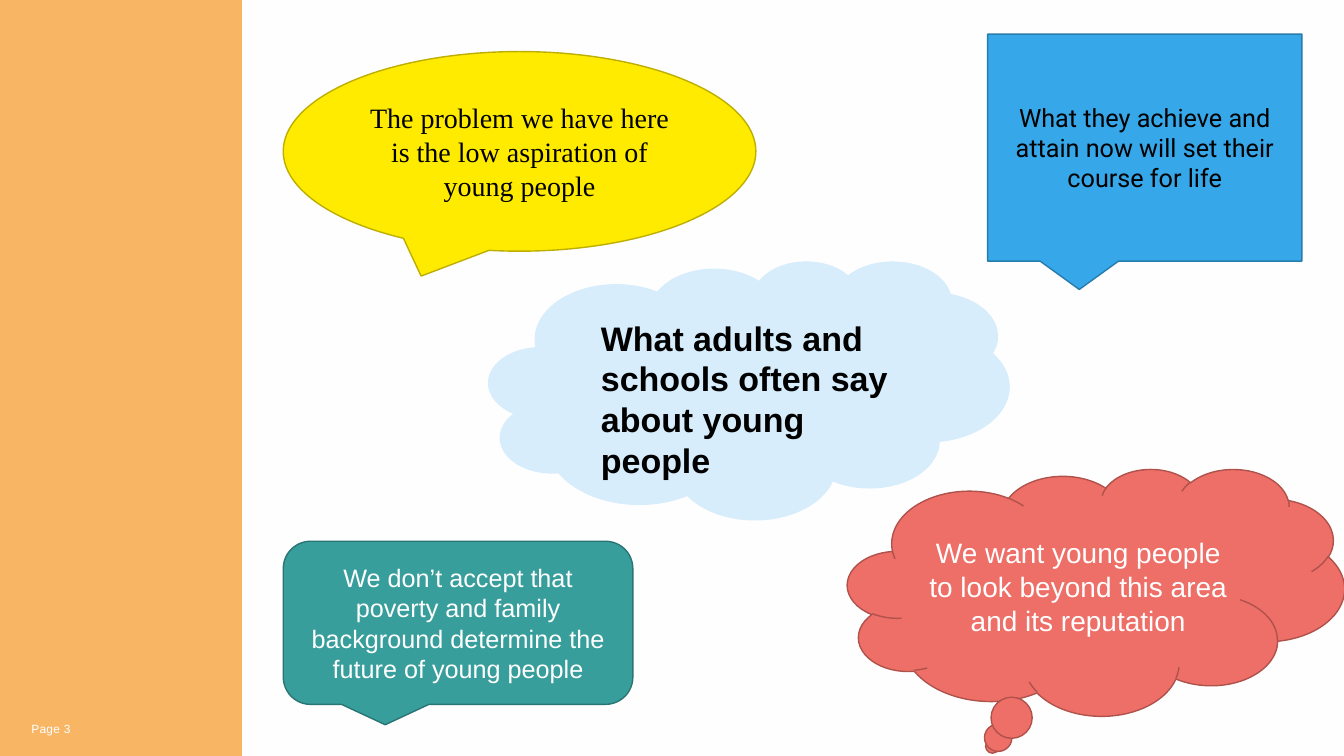
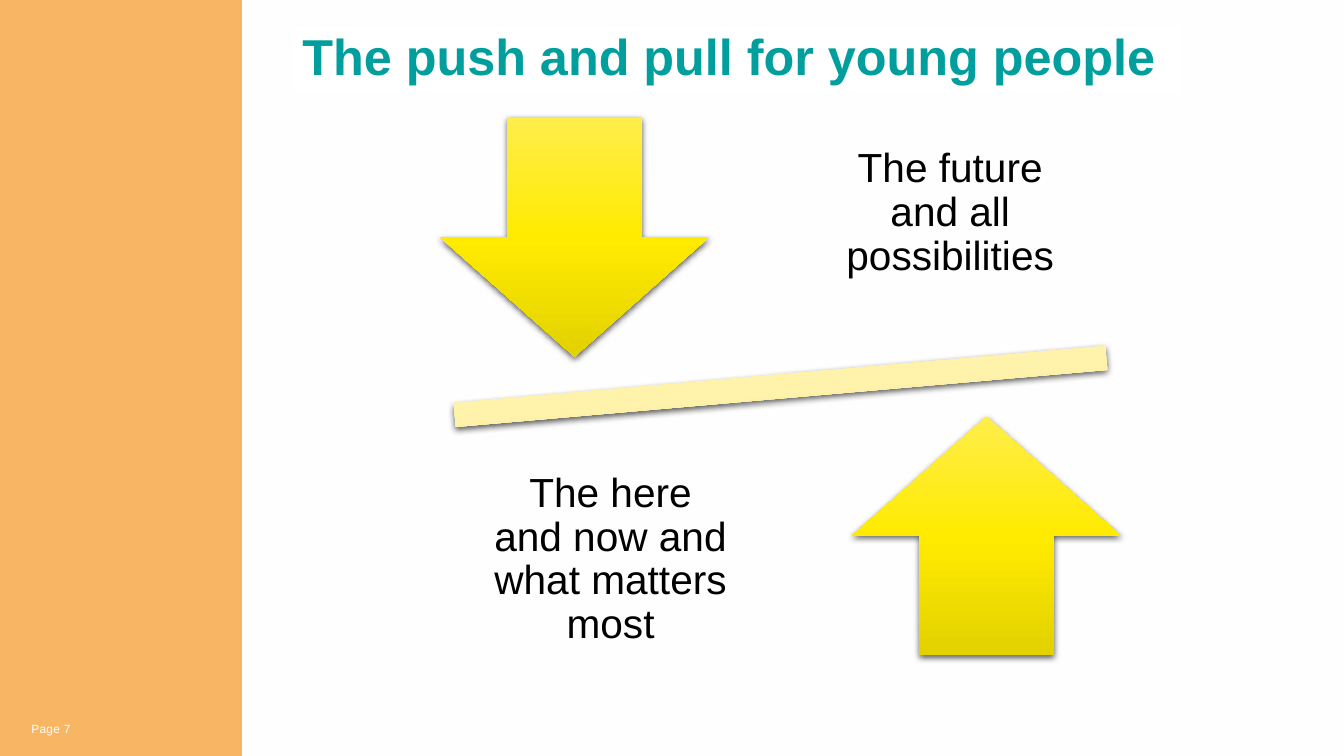
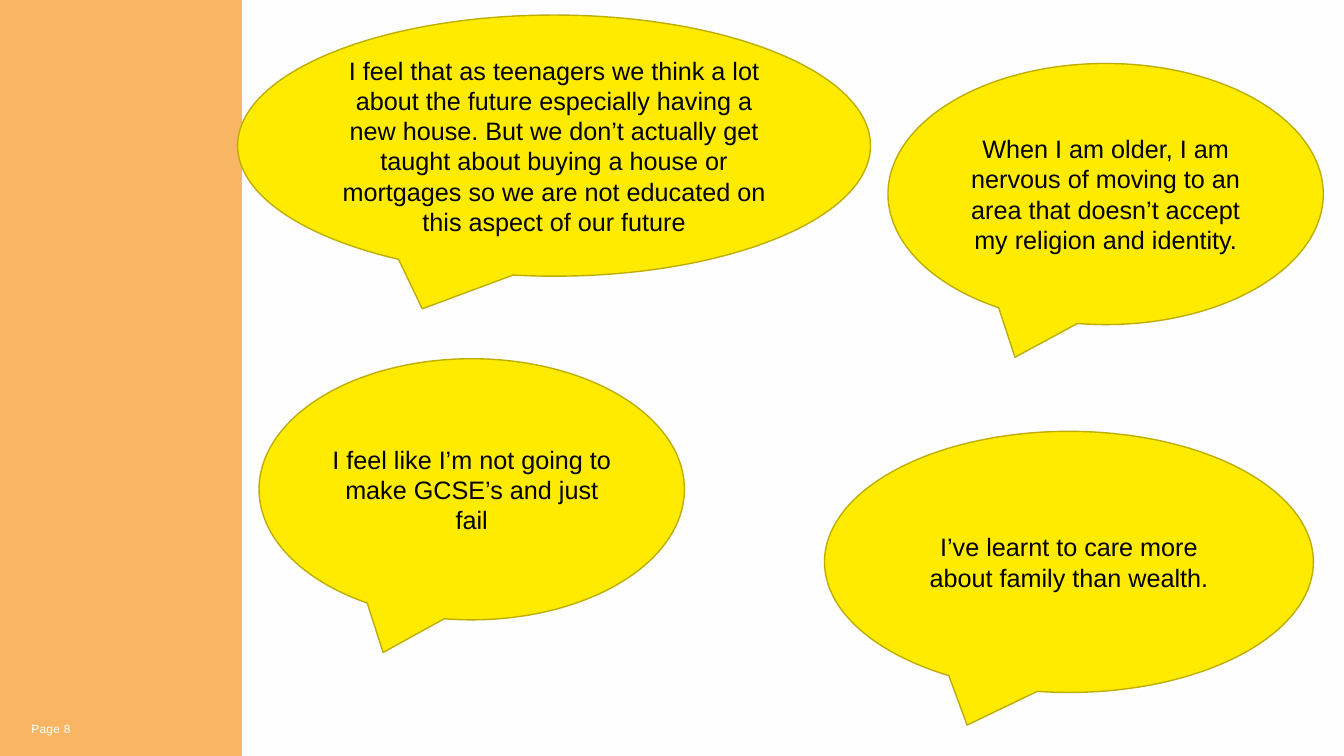
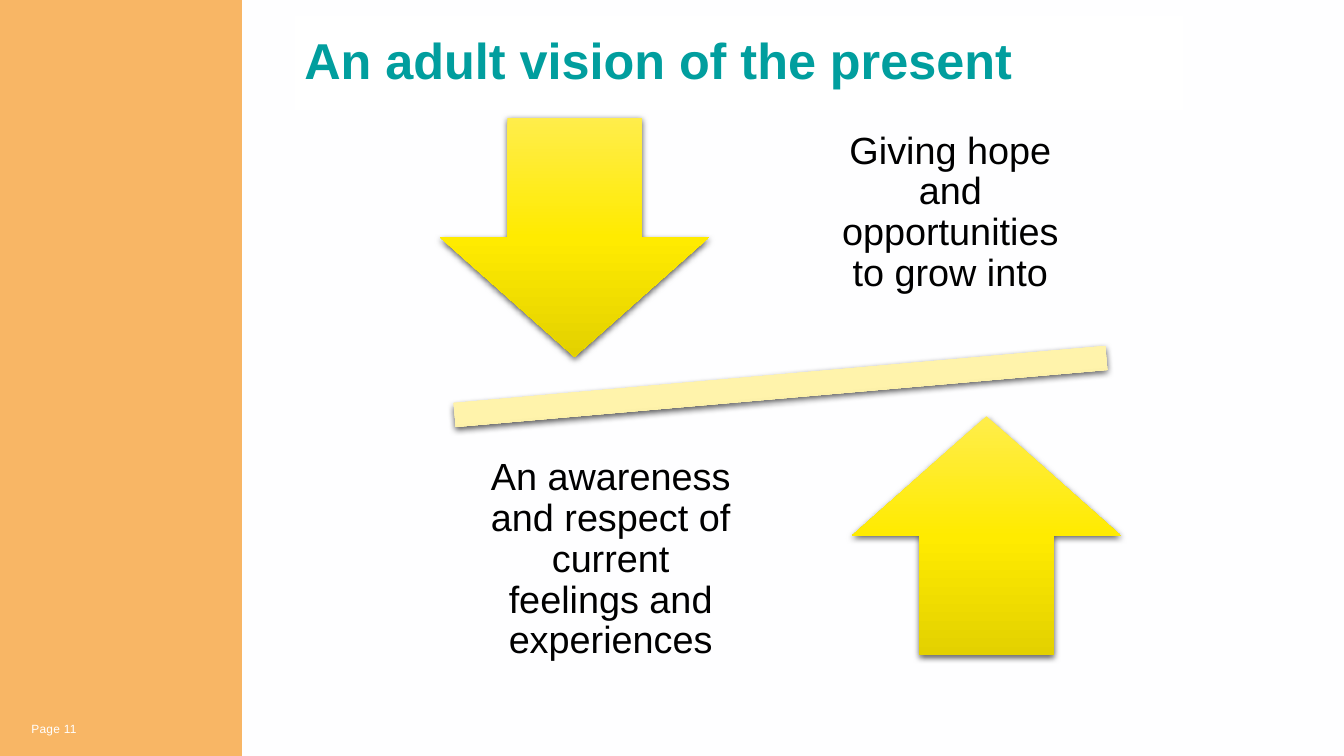
from dataclasses import dataclass

from pptx import Presentation
from pptx.dml.color import RGBColor
from pptx.enum.shapes import MSO_SHAPE as Geo
from pptx.enum.text import MSO_ANCHOR as Anchor, PP_ALIGN as Align
from pptx.oxml import parse_xml as to_xml
from pptx.oxml.ns import nsdecls, qn
from pptx.util import Cm, Pt


@dataclass(frozen=True)
class Theme:
    back: str = "FEFEFF"
    side: str = "F8B665"
    white: str = "FFFFFF"
    black: str = "000000"
    title: str = "019E9E"
    cloud: str = "D7EDFB"
    yellow: tuple = ("FFEB00", "BDAE00")
    red: tuple = ("ED6F67", "AF524C")
    teal: tuple = ("389E9C", "297573")
    blue: tuple = ("36A7E9", "287CAC")
    arrow: tuple = ("FFED4B", "FFEB00", "E3D100")
    bar: tuple = ("FFF5B9", "FFF3AB", "E5DA96")
    sans: str = "Arial"
    serif: str = "Times New Roman"
    modern: str = "Roboto"
    head: float = 36
    hub: float = 24.3
    large: float = 20
    body: float = 18
    foot: float = 8.5


T = Theme()
WIDE, HIGH = 33.87, 19.05


def rgb(code):
    return RGBColor.from_string(code)


def lengths(box):
    return [Cm(n) for n in box]


def middle(x, y, wide, high):
    return x - wide / 2, y - high / 2, wide, high


def write(shape, text, size, color=T.black, font=T.sans, bold=False,
          align=Align.CENTER, anchor=Anchor.MIDDLE, pad=None, space=None):
    frame = shape.text_frame
    frame.word_wrap = True
    frame.vertical_anchor = anchor
    if pad:
        (frame.margin_left, frame.margin_top,
         frame.margin_right, frame.margin_bottom) = lengths(pad)
    para = frame.paragraphs[0]
    para.text = text
    para.alignment = align
    para.line_spacing = space
    para.font.size = Pt(size)
    para.font.name = font
    para.font.bold = bold
    para.font.color.rgb = rgb(color)
    return para


def solid(slide, geo, box, fill, line=None, weight=1):
    shape = slide.shapes.add_shape(geo, *lengths(box))
    shape.shadow.inherit = False
    shape.fill.solid()
    shape.fill.fore_color.rgb = rgb(fill)
    if line:
        shape.line.color.rgb = rgb(line)
        shape.line.width = Pt(weight)
    else:
        shape.line.fill.background()
    return shape


def glossy(slide, geo, box, tones):
    shape = slide.shapes.add_shape(geo, *lengths(box))
    stops = "".join(
        f'<a:gs pos="{i * 50000}"><a:srgbClr val="{tone}"/></a:gs>'
        for i, tone in enumerate(tones))
    props = shape._element.spPr
    props.append(to_xml(
        f'<a:gradFill {nsdecls("a")} rotWithShape="1"><a:gsLst>{stops}</a:gsLst>'
        '<a:lin ang="5400000" scaled="0"/></a:gradFill>'))
    shape.line.fill.background()
    shape.shadow.inherit = False
    props.find(qn("a:effectLst")).append(to_xml(
        f'<a:outerShdw {nsdecls("a")} blurRad="{Pt(4.5)}" dist="{Pt(1.5)}" '
        'dir="5400000" rotWithShape="0"><a:srgbClr val="000000">'
        '<a:alpha val="63000"/></a:srgbClr></a:outerShdw>'))
    return shape


def label(slide, box, text, size, **style):
    return write(slide.shapes.add_textbox(*lengths(box)), text, size, **style)


def start(deck, page):
    slide = deck.slides.add_slide(deck.slide_layouts[6])
    solid(slide, Geo.RECTANGLE, (0, 0, 6.1, HIGH), T.side)
    para = label(slide, (0.79, 18.19, 1.75, 0.86), f"Page {page}", T.foot,
                 color=T.white, align=Align.LEFT, anchor=Anchor.TOP,
                 pad=(0, 0, 0, 0))
    para.runs[0]._r.get_or_add_rPr().set("spc", "20")
    return slide


def title(slide, box, text):
    shape = solid(slide, Geo.RECTANGLE, box, T.white)
    write(shape, text, T.head, color=T.title, bold=True,
          align=Align.LEFT, space=0.9)


def bubble(slide, box, text, geo=Geo.OVAL_CALLOUT, tones=T.yellow,
           size=T.body, **style):
    write(solid(slide, geo, box, *tones), text, size, **style)


def hub(slide, box, text):
    shape = solid(slide, Geo.CLOUD, box, T.cloud, T.cloud, 0.75)
    write(shape, text, T.hub, bold=True, align=Align.LEFT,
          anchor=Anchor.TOP, pad=(1.02, 0.43, 0.25, 0.13))


def balance(slide, center, future, present, size):
    x, y = center
    bar = glossy(slide, Geo.MATH_MINUS, middle(x, y, 22.43, 2.57), T.bar)
    bar.rotation = -5
    pad = (size * 0.02,) * 4
    for sign, geo, text in ((-1, Geo.DOWN_ARROW, future),
                            (1, Geo.UP_ARROW, present)):
        glossy(slide, geo,
               middle(x + sign * 5.19, y + sign * 3.76, 6.78, 6.02), T.arrow)
        label(slide, middle(x - sign * 4.28, y + sign * 4.37, 7.21, 6.32),
              text, size, pad=pad, space=0.9)


def adults(deck):
    slide = start(deck, 3)
    hub(slide, (12.32, 6.58, 13.11, 6.5),
        "What adults and schools often say about young people")
    bubble(slide, (7.14, 1.3, 11.91, 5.03),
           "The problem we have here is the low aspiration of young people",
           size=T.large, font=T.serif)
    bubble(slide, (21.36, 11.81, 12.52, 6.22),
           "We want young people to look beyond this area and its reputation",
           Geo.CLOUD_CALLOUT, T.red, T.large, color=T.white)
    bubble(slide, (7.14, 13.64, 8.81, 4.11),
           "We don’t accept that poverty and family background determine "
           "the future of young people",
           Geo.ROUNDED_RECTANGULAR_CALLOUT, T.teal, color=T.white)
    bubble(slide, (24.89, 0.86, 7.92, 5.72),
           "What they achieve and attain now will set their course for life",
           Geo.RECTANGULAR_CALLOUT, T.blue, font=T.modern)


def voices(deck):
    slide = start(deck, 8)
    for x, y, wide, text in (
        (5.99, 0.38, 15.95,
         "I feel that as teenagers we think a lot about the future especially "
         "having a new house. But we don’t actually get taught about buying a "
         "house or mortgages so we are not educated on this aspect of our future"),
        (6.53, 9.04, 10.72,
         "I feel like I’m not going to make GCSE’s and just fail"),
        (22.38, 1.6, 10.97,
         "When I am older, I am nervous of moving to an area that doesn’t "
         "accept my religion and identity."),
        (20.78, 10.87, 12.32,
         "I’ve learnt to care more about family than wealth."),
    ):
        bubble(slide, (x, y, wide, 6.58), text)


def forces(deck, page, box, head, future, present, size):
    slide = start(deck, page)
    balance(slide, (19.67, 9.74), future, present, size)
    title(slide, box, head)


def main():
    deck = Presentation()
    deck.slide_width, deck.slide_height = Cm(WIDE), Cm(HIGH)
    back = deck.slide_master.background.fill
    back.solid()
    back.fore_color.rgb = rgb(T.back)
    adults(deck)
    forces(deck, 7, (7.37, 0.64, 22.4, 1.73),
           "The push and pull for young people",
           "The future and all possibilities",
           "The here and now and what matters most", 29)
    voices(deck)
    forces(deck, 11, (7.42, 0.41, 22.4, 2.36),
           "An adult vision of the present",
           "Giving hope and opportunities to grow into",
           "An awareness and respect of current feelings and experiences", 27)
    deck.save("out.pptx")


if __name__ == "__main__":
    main()
